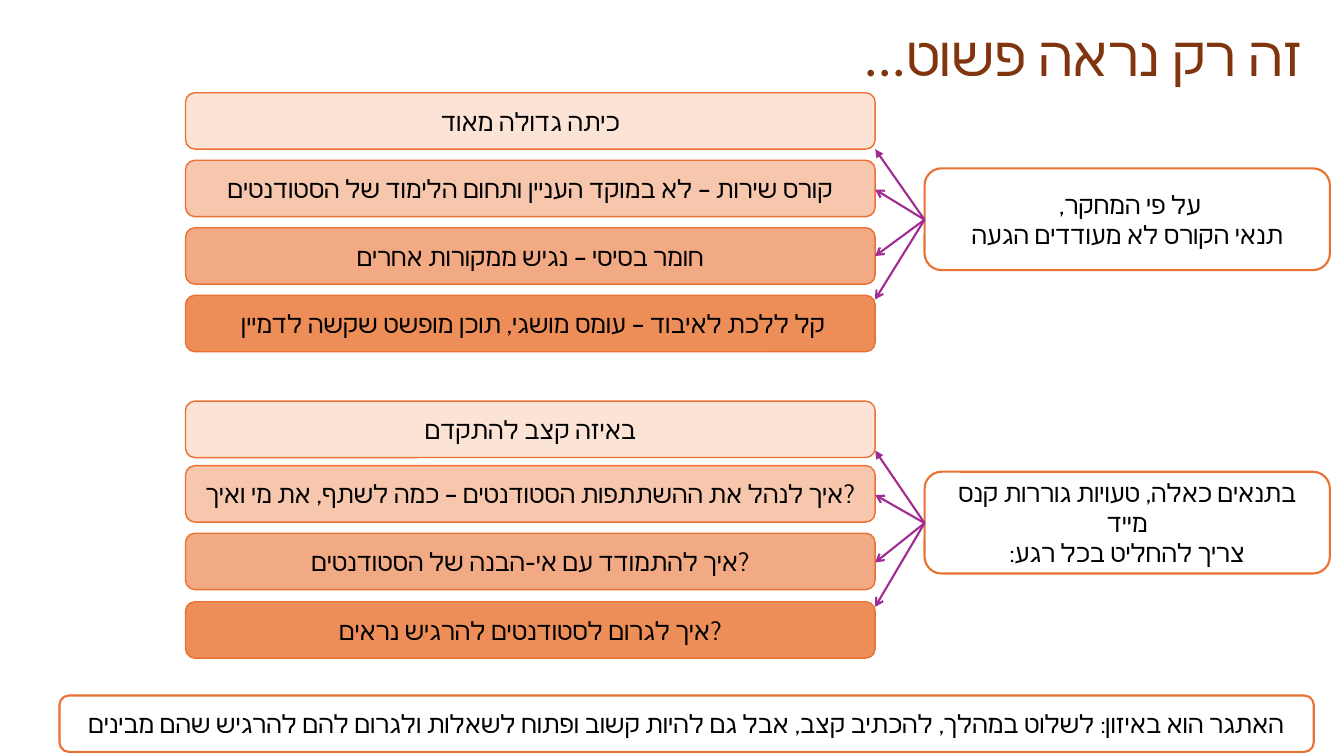
from dataclasses import dataclass

from lxml import etree
from pptx import Presentation
from pptx import util as u
from pptx.dml.color import RGBColor
from pptx.enum import shapes, text
from pptx.oxml.ns import qn


@dataclass(frozen=True)
class Theme:
    title: str = "80350E"
    ink: str = "000000"
    paper: str = "FFFFFF"
    border: str = "E97132"
    arrow: str = "A02B93"
    shades: tuple = ("FBE3D6", "F6C6AD", "F2AA84", "ED8E59")
    title_font: str = "Calibri"
    body_font: str = "Cabin"
    title_size: float = 39.6
    body_size: float = 18
    thin: float = 1
    thick: float = 1.5


class Deck:
    """Draws styled elements on one slide, with lengths in px (100 to the inch)."""

    def __init__(self, prs, theme):
        self.theme = theme
        prs.slide_width, prs.slide_height = self.px(1333), self.px(750)
        self.s = prs.slides.add_slide(prs.slide_layouts[6])

    def px(self, n):
        return u.Emu(n * 9144)

    def add_text(self, tf, paragraphs, font, size, color, align, rtl):
        tf.word_wrap = True
        tf.vertical_anchor = text.MSO_ANCHOR.MIDDLE
        for i, lines in enumerate(paragraphs):
            p = tf.add_paragraph() if i else tf.paragraphs[0]
            p.alignment = align
            if rtl:
                p._p.get_or_add_pPr().set("rtl", "1")
            for j, line in enumerate(lines.split("\n")):
                if j:
                    p.add_line_break()
                r = p.add_run()
                r.text = line
                r.font.name = font
                r.font.size = u.Pt(size)
                r.font.color.rgb = RGBColor.from_string(color)
                etree.SubElement(r._r.get_or_add_rPr(), qn("a:cs"), typeface=font)

    def title(self, x, y, w, h, words):
        t = self.theme
        sp = self.s.shapes.add_textbox(*map(self.px, (x, y, w, h)))
        self.add_text(sp.text_frame, [words], t.title_font, t.title_size, t.title,
                      text.PP_ALIGN.RIGHT, True)
        sp.text_frame.paragraphs[0].line_spacing = 0.9

    def box(self, x, y, w, h, paragraphs, fill, weight, rtl=True):
        t = self.theme
        sp = self.s.shapes.add_shape(
            shapes.MSO_SHAPE.ROUNDED_RECTANGLE, *map(self.px, (x, y, w, h)))
        sp.shadow.inherit = False
        sp.fill.solid()
        sp.fill.fore_color.rgb = RGBColor.from_string(fill)
        sp.line.color.rgb = RGBColor.from_string(t.border)
        sp.line.width = u.Pt(weight)
        self.add_text(sp.text_frame, paragraphs, t.body_font, t.body_size, t.ink,
                      text.PP_ALIGN.CENTER, rtl)

    def arrow(self, x1, y1, x2, y2, head):
        c = self.s.shapes.add_connector(
            shapes.MSO_CONNECTOR.STRAIGHT, *map(self.px, (x1, y1, x2, y2)))
        c.line.color.rgb = RGBColor.from_string(self.theme.arrow)
        c.line.width = u.Pt(self.theme.thick)
        etree.SubElement(c.line._get_or_add_ln(), qn("a:tailEnd"), type=head)
        etree.SubElement(c._element.spPr, qn("a:effectLst"))

    def group(self, top, cause, rows):
        t = self.theme
        self.box(917, top, 402, 101, cause, t.paper, t.thick)
        for i, (words, y, tip, rtl) in enumerate(rows):
            self.box(184, y, 684, 56, [words], t.shades[i], t.thin, rtl)
            self.arrow(917, top + 51, 868, tip, "arrow" if i else "triangle")


GROUPS = [
    (167, ["על פי המחקר, \nתנאי הקורס לא מעודדים הגעה"], [
        ("כיתה גדולה מאוד", 92, 148, False),
        ("קורס שירות – לא במוקד העניין ותחום הלימוד של הסטודנטים", 159, 188, False),
        ("חומר בסיסי – נגיש ממקורות אחרים", 226, 254, True),
        ("קל ללכת לאיבוד – עומס מושגי, תוכן מופשט שקשה לדמיין ", 293, 297, True),
    ]),
    (468, ["בתנאים כאלה, טעויות גוררות קנס מייד", "צריך להחליט בכל רגע:"], [
        ("באיזה קצב להתקדם", 398, 447, False),
        ("איך לנהל את ההשתתפות הסטודנטים – כמה לשתף, את מי ואיך?", 462, 491, False),
        ("איך להתמודד עם אי-הבנה של הסטודנטים?", 529, 558, False),
        ("איך לגרום לסטודנטים להרגיש נראים?", 597, 602, False),
    ]),
]
SUMMARY = ("האתגר הוא באיזון: לשלוט במהלך, להכתיב קצב, אבל גם להיות קשוב "
           "ופתוח לשאלות ולגרום להם להרגיש שהם מבינים")


def main():
    prs = Presentation()
    theme = Theme()
    deck = Deck(prs, theme)
    deck.title(152, 21, 1150, 75, "זה רק נראה פשוט... ")
    for top, cause, rows in GROUPS:
        deck.group(top, cause, rows)
    deck.box(59, 690, 1244, 56, [SUMMARY], theme.paper, theme.thick)
    prs.save("out.pptx")


if __name__ == "__main__":
    main()
